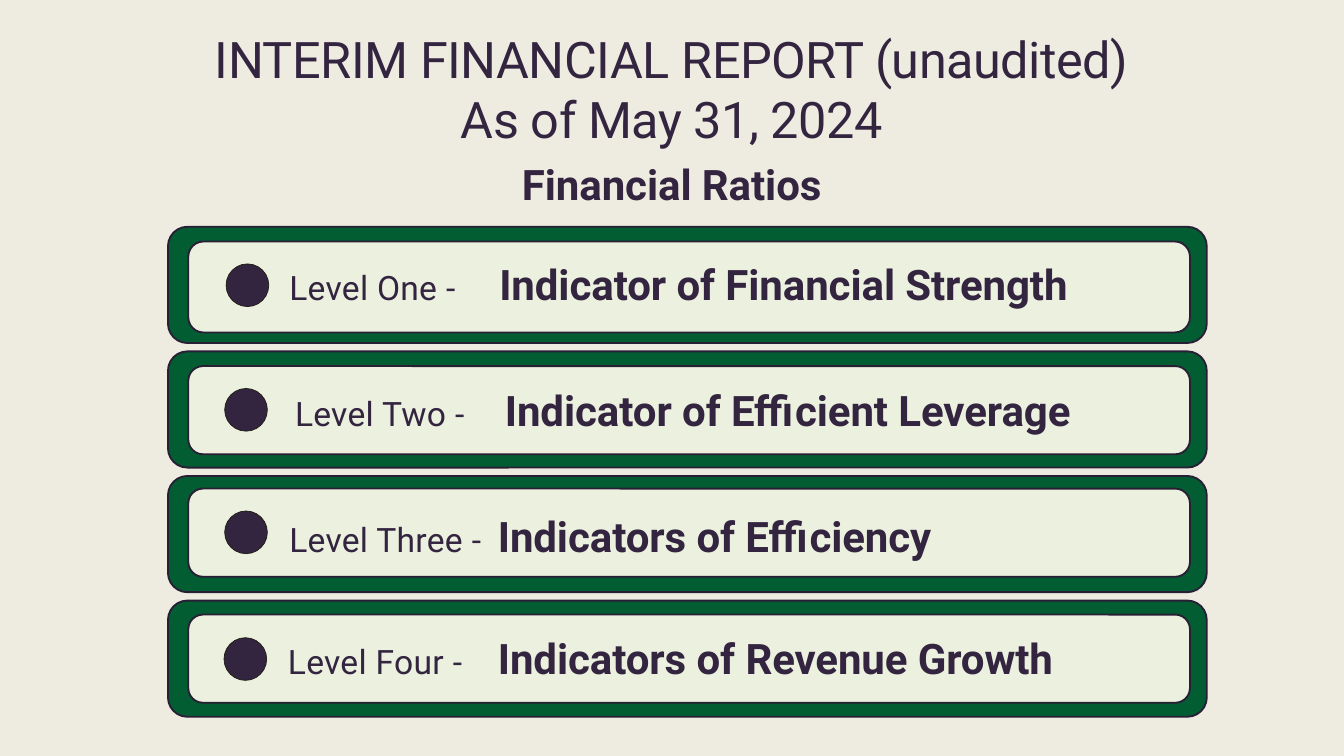
from dataclasses import dataclass

from pptx import Presentation
from pptx.dml.color import RGBColor
from pptx.enum.shapes import MSO_SHAPE as Shape
from pptx.enum.text import MSO_ANCHOR as Anchor, MSO_AUTO_SIZE as AutoSize, PP_ALIGN as Align
from pptx.util import Emu, Pt

EMU_PER_PX = 9525


def px(length):
    return Emu(length * EMU_PER_PX)


@dataclass(frozen=True)
class Theme:
    font: str = "Roboto"
    background: str = "EEECE1"
    ink: str = "332440"
    frame: str = "025E32"
    panel: str = "EBF1DE"
    border: str = "291F35"
    dot_border: str = "1E1C11"
    heading_size: int = 54
    strong_size: int = 45
    level_size: int = 36


class RatioSlide:
    def __init__(self, deck, theme):
        self.theme = theme
        self.slide = deck.slides.add_slide(deck.slide_layouts[5])
        fill = self.slide.background.fill
        fill.solid()
        fill.fore_color.rgb = RGBColor.from_string(theme.background)

    def run(self, paragraph, text, size, spacing=0, bold=False):
        run = paragraph.add_run()
        run.text = text
        run.font.name = self.theme.font
        run.font.size = Pt(size)
        run.font.bold = bold
        run.font.color.rgb = RGBColor.from_string(self.theme.ink)
        run._r.get_or_add_rPr().set("spc", str(spacing))

    def shape(self, kind, box, fill, border, weight):
        shape = self.slide.shapes.add_shape(kind, *map(px, box))
        shape.shadow.inherit = False
        shape.fill.solid()
        shape.fill.fore_color.rgb = RGBColor.from_string(fill)
        shape.line.color.rgb = RGBColor.from_string(border)
        shape.line.width = Pt(weight)

    def bar(self, box, fill):
        self.shape(Shape.ROUNDED_RECTANGLE, box, fill, self.theme.border, 2)

    def dot(self, left, top):
        self.shape(Shape.OVAL, (left, top, 61, 61), self.theme.ink, self.theme.dot_border, 0.75)

    def title(self, box, heading_lines, subtitle):
        title = self.slide.shapes.title
        title.left, title.top, title.width, title.height = map(px, box)
        frame = title.text_frame
        frame.margin_left = frame.margin_right = frame.margin_bottom = 0
        frame.margin_top = px(1)
        frame.vertical_anchor = Anchor.TOP
        frame.word_wrap = True
        frame.auto_size = AutoSize.SHAPE_TO_FIT_TEXT
        heading = frame.paragraphs[0]
        heading.space_before = Pt(1)
        for index, line in enumerate(heading_lines):
            if index:
                heading.add_line_break()
            self.run(heading, line, self.theme.heading_size, -50)
        ratios = frame.add_paragraph()
        ratios.space_before = Pt(10)
        self.run(ratios, subtitle, self.theme.strong_size, -10, True)
        for paragraph in frame.paragraphs:
            paragraph.alignment = Align.CENTER

    def level(self, box, name, separator, indicator):
        frame = self.slide.shapes.add_textbox(*map(px, box)).text_frame
        frame.word_wrap = True
        frame.auto_size = AutoSize.SHAPE_TO_FIT_TEXT
        paragraph = frame.paragraphs[0]
        paragraph.space_before = Pt(5.8)
        self.run(paragraph, name, self.theme.level_size, 30)
        self.run(paragraph, separator, self.theme.level_size)
        self.run(paragraph, indicator, self.theme.strong_size, -10, True)


LEVELS = [
    ("Level One ", "- \t ", "Indicator of Financial Strength",
     (269, 345, 1431, 130), (323, 377), (404, 364, 1281, 83)),
    ("Level Two ", "- \t ", "Indicator of Efficient Leverage",
     (269, 523, 1431, 126), (321, 555), (412, 544, 1188, 83)),
    ("Level Three ", "-  ", "Indicators of Efficiency",
     (269, 698, 1431, 126), (321, 730), (404, 725, 1296, 83)),
    ("Level Four ", "- \t ", "Indicators of Revenue Growth",
     (269, 878, 1431, 126), (320, 911), (402, 899, 1283, 83)),
]
FRAME_TOP, FRAME_PITCH = 324, 178


def main():
    deck = Presentation()
    deck.slide_width, deck.slide_height = px(1920), px(1080)
    theme = Theme()
    page = RatioSlide(deck, theme)
    page.title((240, 39, 1439, 263),
               ["INTERIM FINANCIAL REPORT (unaudited)", "As of May 31, 2024"],
               "Financial Ratios")
    for row, (name, separator, indicator, panel, dot, label) in enumerate(LEVELS):
        page.bar((240, FRAME_TOP + row * FRAME_PITCH, 1484, 166), theme.frame)
        page.bar(panel, theme.panel)
        page.dot(*dot)
        page.level(label, name, separator, indicator)
    deck.save("out.pptx")


if __name__ == "__main__":
    main()
